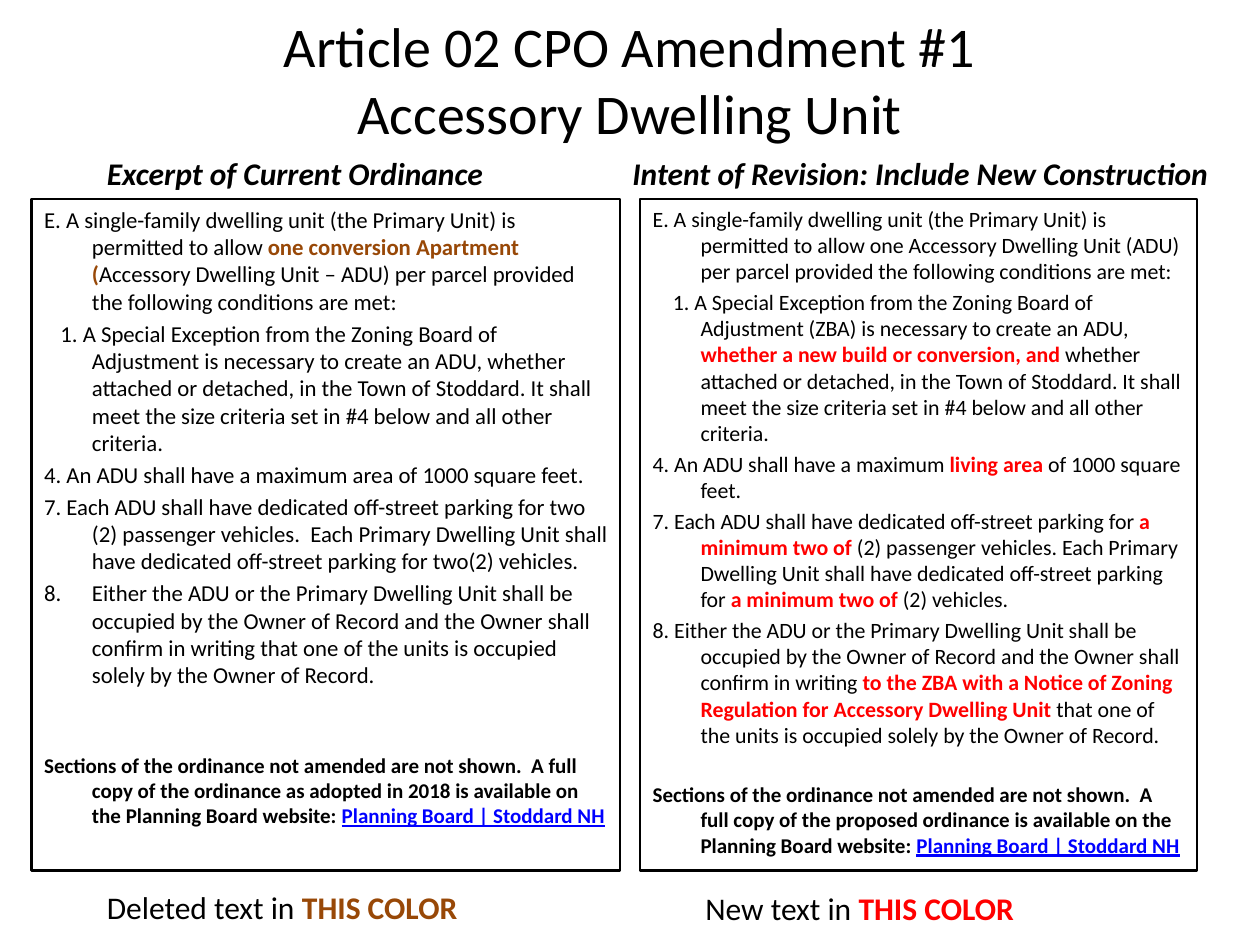
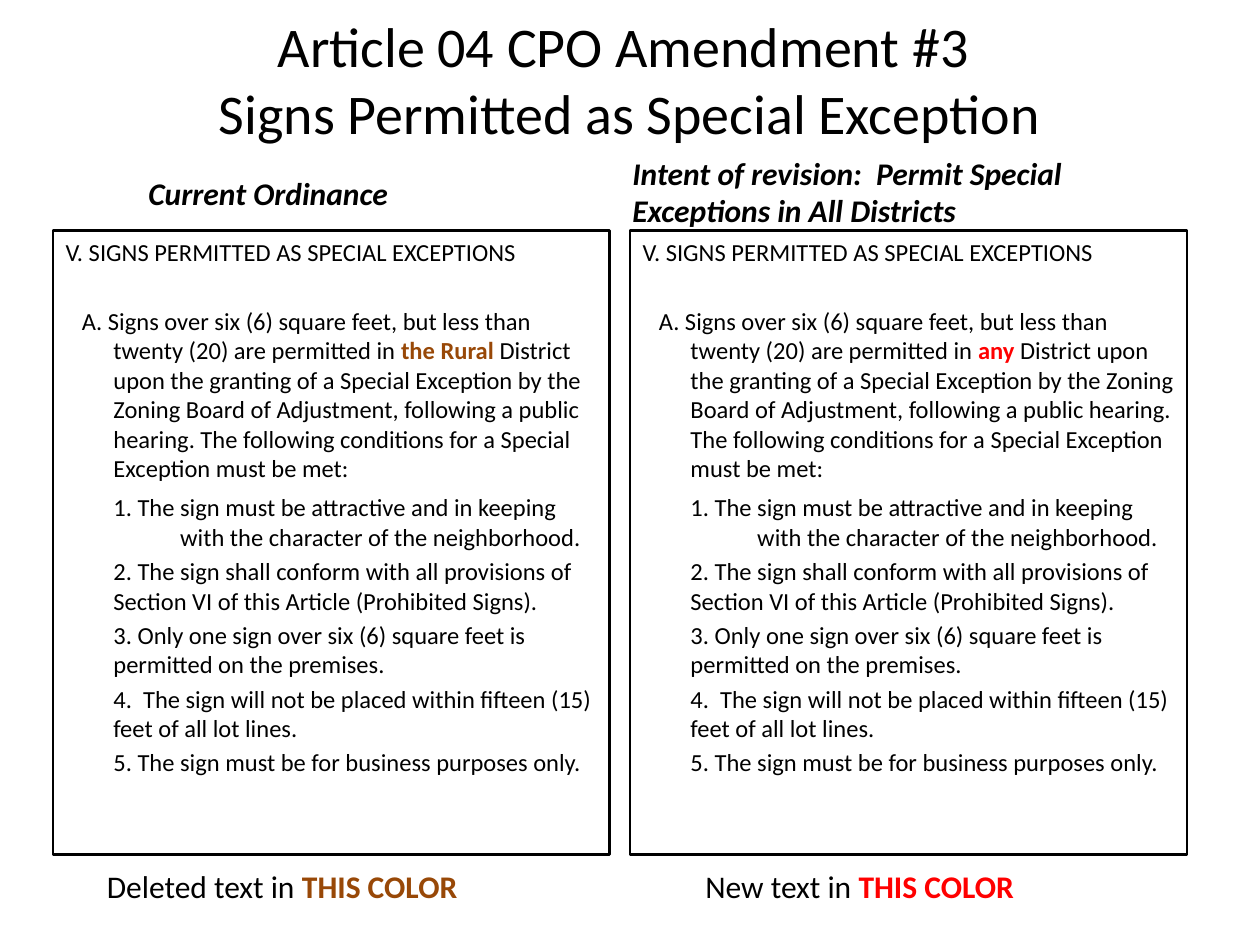
"""Build two slides comparing current and revised zoning ordinance text."""
from lxml import etree
from pptx import Presentation
from pptx.dml.color import RGBColor
from pptx.enum.text import MSO_AUTO_SIZE, MSO_VERTICAL_ANCHOR, PP_ALIGN
from pptx.oxml.ns import qn
from pptx.util import Inches, Pt

NO_FIT = MSO_AUTO_SIZE.NONE
MIDDLE = MSO_VERTICAL_ANCHOR.MIDDLE
CENTER = PP_ALIGN.CENTER
BLACK = RGBColor(0x00, 0x00, 0x00)
DELETED = RGBColor(0x98, 0x48, 0x07)
NEW = RGBColor(0xFF, 0x00, 0x00)
LINK = RGBColor(0x00, 0x00, 0xFF)
TWO_CONTENT = 3
HANG = 0.38

TITLE = {"size": Pt(32)}
HEADING = {"size": Pt(18), "bold": True, "italic": True}
LEGEND = {"size": Pt(18)}
NOTICE = {"size": Pt(12), "bold": True}
LINK_MARK = {"underline": True, "color": LINK}


def write(p, text, base, mark):
    """Write text into p; parts between tildes take the mark format."""
    for i, part in enumerate(text.split("~")):
        values = {"name": "Calibri", "color": BLACK, **base, **(mark if i % 2 else {})}
        for j, line in enumerate(part.split("\v")):
            if j:
                p.add_line_break()
            if not line:
                continue
            r = p.add_run()
            r.text = line
            for key, value in values.items():
                if key == "color":
                    r.font.color.rgb = value
                else:
                    setattr(r.font, key, value)


def add_label(s, left, top, width, height, text, base, mark):
    """Add a wrapped text box with one formatted paragraph."""
    tf = s.shapes.add_textbox(*map(Inches, (left, top, width, height))).text_frame
    tf.word_wrap = True
    write(tf.paragraphs[0], text, base, mark)


notice = ("Sections of the ordinance not amended are not shown.  A full copy of the {} "
          "is available on the Planning Board website: ~Planning Board | Stoddard NH~")

current_unit = [
    {"text": "E. A single-family dwelling unit (the Primary Unit) is permitted to allow "
             "~one conversion Apartment (~Accessory Dwelling Unit – ADU) per parcel provided "
             "the following conditions are met:"},
    {"first": -0.25,
     "text": "1. A Special Exception from the Zoning Board of Adjustment is necessary to create "
             "an ADU, whether attached or detached, in the Town of Stoddard. It shall meet the "
             "size criteria set in #4 below and all other criteria."},
    {"text": "4. An ADU shall have a maximum area of 1000 square feet."},
    {"text": "7. Each ADU shall have dedicated off-street parking for two (2) passenger vehicles.  "
             "Each Primary Dwelling Unit shall have dedicated off-street parking for two(2) "
             "vehicles."},
    {"number": 8,
     "text": "Either the ADU or the Primary Dwelling Unit shall be occupied by the Owner of "
             "Record and the Owner shall confirm in writing that one of the units is occupied "
             "solely by the Owner of Record."},
    {"before": 36.5, "base": NOTICE, "mark": LINK_MARK,
     "text": notice.format("ordinance as adopted in 2018")},
]
revised_unit = [
    {"text": "E. A single-family dwelling unit (the Primary Unit) is permitted to allow one "
             "Accessory Dwelling Unit (ADU) per parcel provided the following conditions are met:"},
    {"first": -0.22,
     "text": "1. A Special Exception from the Zoning Board of Adjustment (ZBA) is necessary to "
             "create an ADU, ~whether a new build or conversion, and~ whether attached or "
             "detached, in the Town of Stoddard. It shall meet the size criteria set in #4 below "
             "and all other criteria."},
    {"text": "4. An ADU shall have a maximum ~living area ~of 1000 square feet."},
    {"text": "7. Each ADU shall have dedicated off-street parking for~ a minimum two of ~(2) "
             "passenger vehicles. Each Primary Dwelling Unit shall have dedicated off-street "
             "parking for ~a minimum two of ~(2) vehicles."},
    {"text": "8. Either the ADU or the Primary Dwelling Unit shall be occupied by the Owner of "
             "Record and the Owner shall confirm in writing ~to the ZBA with a Notice of Zoning "
             "Regulation for Accessory Dwelling Unit ~that one of the units is occupied solely "
             "by the Owner of Record."},
    {"before": 19.5, "base": NOTICE, "mark": LINK_MARK,
     "text": notice.format("proposed ordinance")},
]

current_signs, revised_signs = [
    [
        {"text": "V. SIGNS PERMITTED AS SPECIAL EXCEPTIONS"},
        {"first": -0.25, "before": 22.7,
         "text": "A. Signs over six (6) square feet, but less than twenty (20) are permitted in "
                 f"~{district}~ District upon the granting of a Special Exception by the Zoning "
                 "Board of Adjustment, following a public hearing. The following conditions for "
                 "a Special Exception must be met:"},
        {"left": 0.91, "first": -0.53,
         "text": "1. The sign must be attractive and in keeping\v"
                 "with the character of the neighborhood."},
        {"first": 0,
         "text": "2. The sign shall conform with all provisions of Section VI of this Article "
                 "(Prohibited Signs)."},
        {"first": 0,
         "text": "3. Only one sign over six (6) square feet is permitted on the premises."},
        {"first": 0,
         "text": "4.  The sign will not be placed within fifteen (15) feet of all lot lines."},
        {"first": 0, "text": "5. The sign must be for business purposes only."},
    ]
    for district in ("the Rural", "any")
]

slides = [
    {"title": "Article 02 CPO Amendment #1\vAccessory Dwelling Unit",
     "headings": [(0.75, 1.17, 3.75, 0.4, "Excerpt of Current Ordinance"),
                  (4.92, 1.17, 5.08, 0.4, "Intent of Revision: Include New Construction")],
     "panels": [(0.25, 1.58, 4.67, 5.33, 13, current_unit),
                (5.08, 1.58, 4.42, 5.33, 12.5, revised_unit)],
     "legend_tops": (7, 7.01)},
    {"title": "Article 04 CPO Amendment #3 \vSigns Permitted as Special Exception",
     "headings": [(1.08, 1.33, 2.5, 0.4, "Current Ordinance"),
                  (4.92, 1.17, 4.42, 0.71,
                   "Intent of revision:  Permit Special Exceptions in All Districts")],
     "panels": [(0.42, 1.83, 4.42, 4.95, 14, current_signs),
                (5, 1.83, 4.42, 4.95, 14, revised_signs)],
     "legend_tops": (6.83, 6.83)},
]
legends = [(0.75, "Deleted", DELETED), (5.5, "New", NEW)]

prs = Presentation()
prs.slide_width, prs.slide_height = Inches(10), Inches(7.5)

for content in slides:
    s = prs.slides.add_slide(prs.slide_layouts[TWO_CONTENT])
    title = s.shapes.title
    title.left, title.top, title.width, title.height = map(Inches, (0.5, 0, 9, 1.25))
    tf = title.text_frame
    tf.auto_size, tf.vertical_anchor = NO_FIT, MIDDLE
    tf.paragraphs[0].alignment = CENTER
    write(tf.paragraphs[0], content["title"], TITLE, {})

    for idx, (panel, legend) in enumerate(zip(content["panels"], legends), 1):
        *place, size, paragraphs = panel
        sp = s.placeholders[idx]
        sp.left, sp.top, sp.width, sp.height = map(Inches, place)
        sp.line.color.rgb = BLACK
        sp.line.width = Pt(1.5)
        tf = sp.text_frame
        tf.auto_size = NO_FIT
        for i, item in enumerate(paragraphs):
            p = tf.add_paragraph() if i else tf.paragraphs[0]
            if "before" in item:
                p.space_before = Pt(item["before"])
            pPr = p._p.get_or_add_pPr()
            pPr.set("marL", str(Inches(item.get("left", HANG))))
            pPr.set("indent", str(Inches(item.get("first", -HANG))))
            if "number" in item:
                etree.SubElement(pPr, qn("a:buFont"), typeface="+mj-lt")
                etree.SubElement(pPr, qn("a:buAutoNum"), type="arabicPeriod",
                                 startAt=str(item["number"]))
            else:
                etree.SubElement(pPr, qn("a:buNone"))
            write(p, item["text"], item.get("base", {"size": Pt(size)}),
                  item.get("mark", {"bold": True, "color": legend[2]}))

    for *place, text in content["headings"]:
        add_label(s, *place, text, HEADING, {})
    for (left, word, color), top in zip(legends, content["legend_tops"]):
        add_label(s, left, top, 4.25, 0.4, f"{word} text in ~THIS COLOR~", LEGEND,
                  {"bold": True, "color": color})

prs.save("out.pptx")
